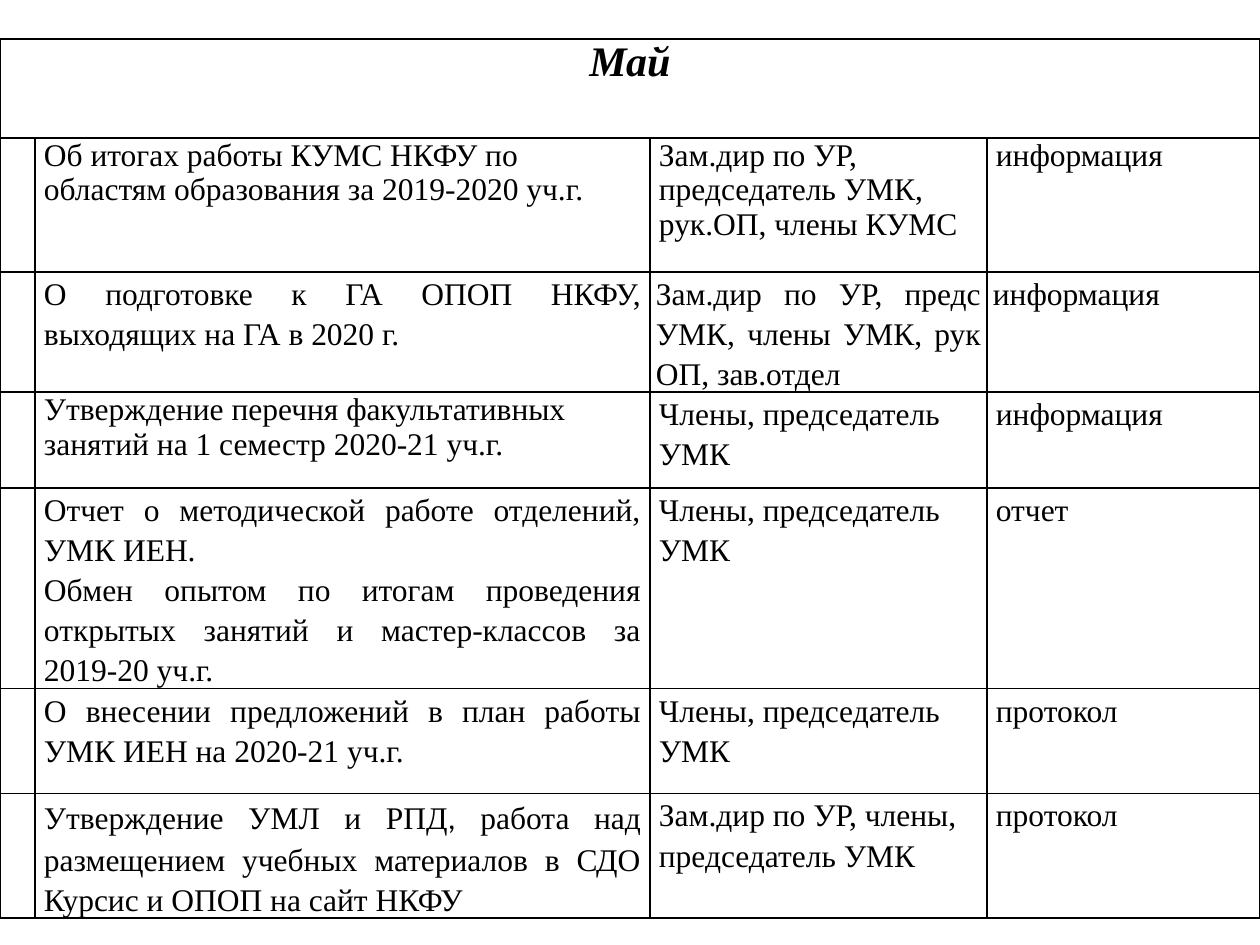
"""Build the May agenda slide: a titled table of topics, people in charge and outcomes."""
import pptx
import pptx.dml.color
import pptx.enum.text
import pptx.oxml
import pptx.oxml.ns
import pptx.util

PX = 914400 // 126
ALIGN = pptx.enum.text.PP_ALIGN
THEME = {
    "ink": "000000",
    "font": "Times New Roman",
    "comma_font": "Calibri",
    "title": 24,
    "body": 18,
    "border": 1,
}
STYLES = {
    "title": (ALIGN.CENTER, None, 6),
    "plain": (ALIGN.LEFT, None, 9),
    "spaced": (ALIGN.LEFT, 1.15, 9),
    "justified": (ALIGN.JUSTIFY, 1.15, 9),
    "narrow": (ALIGN.JUSTIFY, 1.15, 6),
}
COLUMN_WIDTHS = [35, 615, 337, 273]
ROW_HEIGHTS = [99, 134, 105, 96, 135, 105, 96]
MEMBERS = "Члены, председатель УМК"
AGENDA = [
    [("plain", "Об итогах работы КУМС НКФУ по областям образования за 2019-2020 уч.г."),
     ("plain", "Зам.дир по УР, председатель УМК, рук.ОП, члены КУМС"),
     ("plain", "информация")],
    [("justified", "О подготовке к ГА ОПОП НКФУ, выходящих на ГА в 2020 г."),
     ("narrow", "Зам.дир по УР, предс УМК, члены УМК, рук ОП, зав.отдел"),
     ("narrow", "информация")],
    [("plain", "Утверждение перечня факультативных занятий на 1 семестр 2020-21 уч.г."),
     ("spaced", MEMBERS),
     ("justified", "информация")],
    [("justified", "Отчет о методической работе отделений, УМК ИЕН. \n"
                   "Обмен опытом по итогам проведения открытых занятий "
                   "и мастер-классов за 2019-20 уч.г."),
     ("spaced", MEMBERS),
     ("justified", "отчет")],
    [("justified", "О внесении предложений в план работы УМК ИЕН на 2020-21 уч.г."),
     ("spaced", MEMBERS),
     ("justified", "протокол")],
    [("justified", "Утверждение УМЛ и РПД"),
     ("spaced", "Зам.дир по УР, члены, председатель УМК"),
     ("justified", "протокол")],
]


def write_cell(cell, style, text):
    align, spacing, inset = STYLES[style]
    cell.margin_left = cell.margin_right = inset * PX
    cell.text_frame.text = text
    for para in cell.text_frame.paragraphs:
        para.alignment = align
        para.line_spacing = spacing
        for span in para.runs:
            format_span(span, style == "title")


def format_span(span, heading=False):
    span.font.name = THEME["font"]
    span.font.size = pptx.util.Pt(THEME["title" if heading else "body"])
    span.font.bold = span.font.italic = heading
    span.font.color.rgb = pptx.dml.color.RGBColor.from_string(THEME["ink"])


deck = pptx.Presentation()
deck.slide_width = 1260 * PX
deck.slide_height = 945 * PX
page = deck.slides.add_slide(deck.slide_layouts[6])

frame = page.shapes.add_table(
    len(ROW_HEIGHTS), len(COLUMN_WIDTHS), 0, 39 * PX, sum(COLUMN_WIDTHS) * PX, sum(ROW_HEIGHTS) * PX)
table = frame.table
table.first_row = table.horz_banding = False
for column, width in zip(table.columns, COLUMN_WIDTHS):
    column.width = width * PX
for row, height in zip(table.rows, ROW_HEIGHTS):
    row.height = height * PX

for cell in table.iter_cells():
    cell.margin_top = cell.margin_bottom = 0
    cell.fill.background()
    for index, side in enumerate(("lnL", "lnR", "lnT", "lnB")):
        border = pptx.oxml.parse_xml(
            f'<a:{side} {pptx.oxml.ns.nsdecls("a")} w="{pptx.util.Pt(THEME["border"])}">'
            f'<a:solidFill><a:srgbClr val="{THEME["ink"]}"/></a:solidFill></a:{side}>')
        cell._tc.get_or_add_tcPr().insert(index, border)

table.cell(0, 0).merge(table.cell(0, len(COLUMN_WIDTHS) - 1))
write_cell(table.cell(0, 0), "title", "Май")
for row_index, entries in enumerate(AGENDA, start=1):
    for column_index, (style, text) in enumerate(entries, start=1):
        write_cell(table.cell(row_index, column_index), style, text)

last_topic = table.cell(len(AGENDA), 1).text_frame.paragraphs[0]
for text, font in (
    (",", THEME["comma_font"]),
    (" работа над размещением учебных материалов в СДО Курсис и ОПОП на сайт НКФУ", THEME["font"]),
):
    span = last_topic.add_run()
    span.text = text
    format_span(span)
    span.font.name = font

deck.save("out.pptx")
